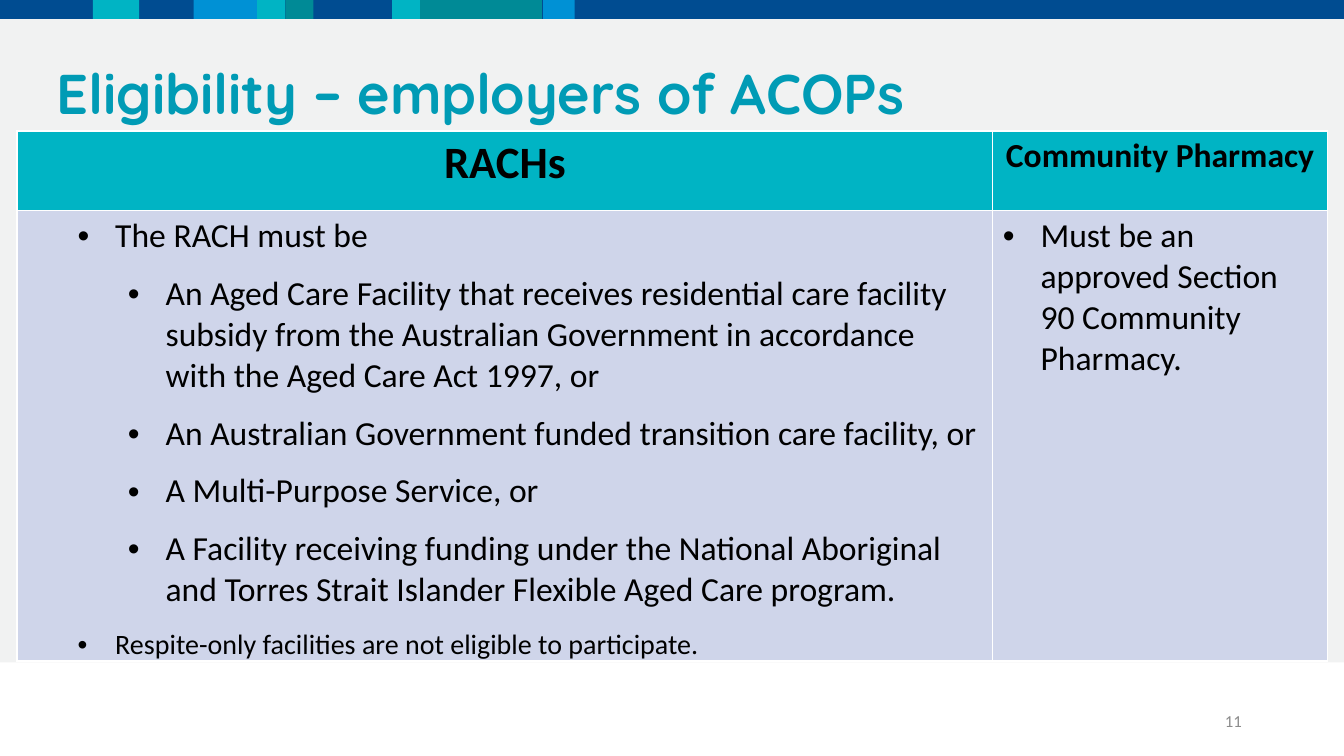
from dataclasses import dataclass
from lxml import etree
from pptx import Presentation
from pptx.dml.color import RGBColor
from pptx.enum import shapes, text
from pptx.oxml import ns
from pptx.util import Cm, Pt


@dataclass(frozen=True)
class Theme:
    navy: str = "004C91"
    aqua: str = "00B4C4"
    blue: str = "0091D5"
    teal: str = "008A96"
    panel: str = "F1F2F2"
    title: str = "009BB5"
    body: str = "CFD5EA"
    ink: str = "000000"
    gray: str = "8C8C8C"
    head: str = "Quicksand"
    font: str = "Calibri"
    huge: int = 40
    big: int = 32
    text: int = 24
    note: int = 20
    tiny: int = 12


class Deck:
    def __init__(self, theme):
        self.theme = theme
        self.prs = Presentation()
        self.prs.slide_width, self.prs.slide_height = Cm(33.87), Cm(19.05)
        self.slide = self.prs.slides.add_slide(self.prs.slide_layouts[5])

    def apply(self, item, style):
        for key, value in style.items():
            setattr(item, key, value)

    def line(self, para, words, size, color=None, name=None, bold=False, **style):
        self.apply(para, style)
        run = para.add_run()
        run.text = words
        self.apply(run.font, {"size": Pt(size), "name": name or self.theme.font, "bold": bold})
        run.font.color.rgb = RGBColor.from_string(color or self.theme.ink)

    def rect(self, left, top, width, height, color):
        box = self.slide.shapes.add_shape(
            shapes.MSO_SHAPE.RECTANGLE, Cm(left), Cm(top), Cm(width), Cm(height))
        box.shadow.inherit = False
        box.fill.solid()
        box.fill.fore_color.rgb = RGBColor.from_string(color)
        box.line.fill.background()

    def title(self, words, left, top, width, height):
        box = self.slide.shapes.title
        self.slide.shapes._spTree.append(box._element)
        self.apply(box, {"left": Cm(left), "top": Cm(top), "width": Cm(width), "height": Cm(height)})
        self.apply(box.text_frame, {"word_wrap": True, "auto_size": text.MSO_AUTO_SIZE.SHAPE_TO_FIT_TEXT,
                                    "vertical_anchor": text.MSO_ANCHOR.TOP})
        self.line(box.text_frame.paragraphs[0], words, self.theme.huge, self.theme.title,
                  self.theme.head, True, alignment=text.PP_ALIGN.LEFT, space_after=Pt(6))

    def label(self, words, left, top, width, height):
        box = self.slide.shapes.add_textbox(Cm(left), Cm(top), Cm(width), Cm(height))
        self.apply(box.text_frame, {"word_wrap": True, "vertical_anchor": text.MSO_ANCHOR.MIDDLE})
        self.line(box.text_frame.paragraphs[0], words, self.theme.tiny, self.theme.gray,
                  alignment=text.PP_ALIGN.RIGHT)

    def bullet(self, para, words, size, level):
        hang = Cm(0.95)
        props = para._p.get_or_add_pPr()
        props.set("marL", str(hang + level * Cm(1.27)))
        props.set("indent", str(-hang))
        etree.SubElement(props, ns.qn("a:buFont")).set("typeface", "Arial")
        etree.SubElement(props, ns.qn("a:buChar")).set("char", "•")
        self.line(para, words, size, level=level, space_after=Pt(12))

    def table(self, heads, lists, left, top, widths, heights):
        frame = self.slide.shapes.add_table(
            2, len(heads), Cm(left), Cm(top), Cm(sum(widths)), Cm(sum(heights)))
        grid = frame.table
        for col, width in zip(grid.columns, widths):
            col.width = Cm(width)
        for row, height, color in zip(grid.rows, heights, (self.theme.aqua, self.theme.body)):
            row.height = Cm(height)
            for cell in row.cells:
                cell.fill.solid()
                cell.fill.fore_color.rgb = RGBColor.from_string(color)
        for col, ((words, size), items) in enumerate(zip(heads, lists)):
            self.line(grid.cell(0, col).text_frame.paragraphs[0], words, size, bold=True,
                      alignment=text.PP_ALIGN.CENTER)
            body = grid.cell(1, col).text_frame
            for num, item in enumerate(items):
                para = body.add_paragraph() if num else body.paragraphs[0]
                self.bullet(para, *item)


def main():
    theme = Theme()
    deck = Deck(theme)
    bar = 0.58
    deck.rect(0, 0, 33.87, bar, theme.navy)
    for left, width, color in [
        (2.34, 1.17, theme.aqua), (4.88, 1.62, theme.blue), (6.48, 0.71, theme.aqua),
        (7.19, 0.71, theme.teal), (9.88, 0.71, theme.aqua), (10.59, 3.07, theme.teal),
        (13.69, 0.79, theme.blue),
    ]:
        deck.rect(left, 0, width, bar, color)
    deck.rect(0, 0.48, 33.87, 16.21, theme.panel)
    deck.title("Eligibility – employers of ACOPs", 1.17, 1.35, 31.14, 1.96)
    homes = [
        ("The RACH must be", theme.text, 1),
        ("An Aged Care Facility that receives residential care facility subsidy from the "
         "Australian Government in accordance with the Aged Care Act 1997, or", theme.text, 2),
        ("An Australian Government funded transition care facility, or", theme.text, 2),
        ("A Multi-Purpose Service, or", theme.text, 2),
        ("A Facility receiving funding under the National Aboriginal and Torres Strait "
         "Islander Flexible Aged Care program.", theme.text, 2),
        ("Respite-only facilities are not eligible to participate.", theme.note, 1),
    ]
    stores = [("Must be an approved Section 90 Community Pharmacy.", theme.text, 0)]
    deck.table([("RACHs", theme.big), ("Community Pharmacy", theme.text)], [homes, stores],
               0.43, 3.3, (24.59, 8.43), (2.01, 10.92))
    deck.label("11", 23.93, 17.65, 7.62, 1.02)
    deck.prs.save("out.pptx")


if __name__ == "__main__":
    main()
